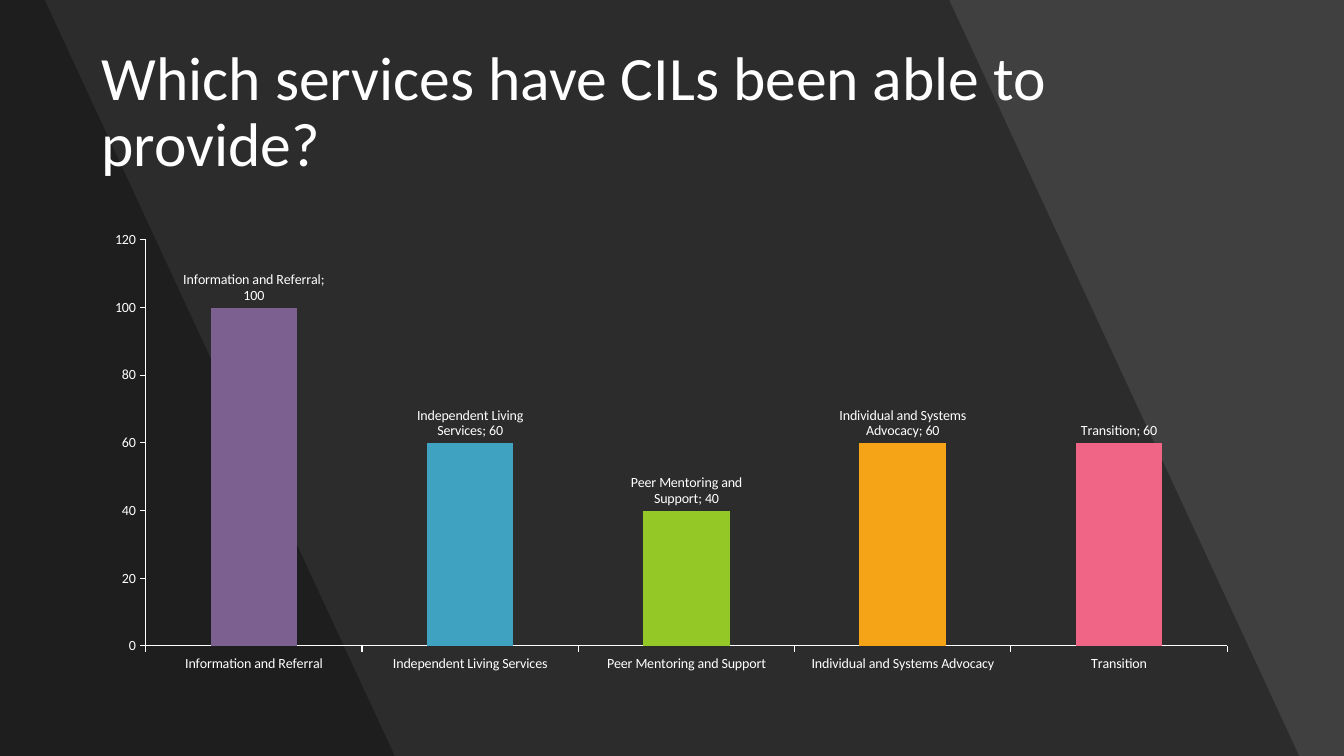
from dataclasses import dataclass

from lxml.etree import SubElement
from pptx import Presentation
from pptx.chart.data import CategoryChartData
from pptx.dml.color import RGBColor
from pptx.enum.chart import XL_CHART_TYPE, XL_LABEL_POSITION, XL_TICK_MARK
from pptx.enum.text import MSO_ANCHOR
from pptx.oxml import parse_xml
from pptx.oxml.ns import nsdecls, qn
from pptx.util import Pt


@dataclass(frozen=True)
class Theme:
    font: str = "Calibri"
    background: str = "404040"
    shade: str = "000000"
    shade_alpha: int = 30
    text: str = "FFFFFF"
    title_size: int = 44
    chart_size: int = 10


THEME = Theme()
WIDTH, HEIGHT = 960, 540
SERVICES = [
    ("Information and Referral", 100, "7C608F"),
    ("Independent Living Services", 60, "40A2C1"),
    ("Peer Mentoring and Support", 40, "94C826"),
    ("Individual and Systems Advocacy", 60, "F5A417"),
    ("Transition", 60, "F06485"),
]


def rgb(value):
    return RGBColor.from_string(value)


def set_solid(fill, color):
    fill.solid()
    fill.fore_color.rgb = rgb(color)


def set_font(font, size):
    formats = {"name": THEME.font, "size": Pt(size)}
    for name, value in formats.items():
        setattr(font, name, value)
    font.color.rgb = rgb(THEME.text)


def add_shade(slide, top_right, bottom_right):
    """Darken the slide left of a slanted edge."""
    builder = slide.shapes.build_freeform(0, 0, scale=Pt(1))
    corners = [(top_right, 0), (bottom_right, HEIGHT), (0, HEIGHT)]
    builder.add_line_segments(corners, close=True)
    sp = builder.convert_to_shape()
    sp.shadow.inherit = False
    sp.line.fill.background()
    set_solid(sp.fill, THEME.shade)
    color = sp.fill._xPr.find(qn("a:solidFill"))[0]
    SubElement(color, qn("a:alpha"), val=str(THEME.shade_alpha * 1000))


def add_title(slide, text):
    box = slide.shapes.add_textbox(Pt(65.5), Pt(29), Pt(829), Pt(104.5))
    tf = box.text_frame
    tf.word_wrap = True
    tf.vertical_anchor = MSO_ANCHOR.MIDDLE
    p = tf.paragraphs[0]
    p.line_spacing = 0.9
    r = p.add_run()
    r.text = text
    set_font(r.font, THEME.title_size)


def format_axis(axis):
    formats = {
        "has_major_gridlines": False,
        "major_tick_mark": XL_TICK_MARK.OUTSIDE,
        "minor_tick_mark": XL_TICK_MARK.NONE,
    }
    for name, value in formats.items():
        setattr(axis, name, value)
    line = axis.format.line
    line.width = Pt(0.75)
    line.color.rgb = rgb(THEME.text)
    set_font(axis.tick_labels.font, THEME.chart_size)


def format_labels(labels):
    formats = {
        "show_value": True,
        "show_category_name": True,
        "position": XL_LABEL_POSITION.OUTSIDE_END,
    }
    for name, value in formats.items():
        setattr(labels, name, value)
    set_font(labels.font, THEME.chart_size)
    separator = parse_xml(f"<c:separator {nsdecls('c')}>; </c:separator>")
    labels._element.find(qn("c:showBubbleSize")).addnext(separator)


def place_plot(chart, **fractions):
    """Fix the inner plot area as fractions of the chart frame."""
    area = chart._chartSpace.find(".//" + qn("c:plotArea"))
    for old in area.findall(qn("c:layout")):
        area.remove(old)
    values = {"layoutTarget": "inner", "xMode": "edge", "yMode": "edge", **fractions}
    layout = parse_xml(f"<c:layout {nsdecls('c')}><c:manualLayout/></c:layout>")
    for name, value in values.items():
        SubElement(layout[0], qn(f"c:{name}"), val=str(value))
    area.insert(0, layout)


def add_service_chart(slide):
    names, values, colors = zip(*SERVICES)
    data = CategoryChartData()
    data.categories = names
    data.add_series("Series 1", values)
    frame = slide.shapes.add_chart(
        XL_CHART_TYPE.COLUMN_CLUSTERED, Pt(66), Pt(159), Pt(828), Pt(327), data
    )
    chart = frame.chart
    chart.has_legend = False
    chart.has_title = False
    set_font(chart.font, THEME.chart_size)
    for axis in (chart.category_axis, chart.value_axis):
        format_axis(axis)
    scale = {"minimum_scale": 0, "maximum_scale": 120, "major_unit": 20}
    for name, value in scale.items():
        setattr(chart.value_axis, name, value)
    plot = chart.plots[0]
    plot.gap_width = 150
    plot.vary_by_categories = False
    series = plot.series[0]
    for i, color in enumerate(colors):
        set_solid(series.points[i].format.fill, color)
    format_labels(series.data_labels)
    place_plot(chart, x=0.046, y=0.038, w=0.933, h=0.887)


def main():
    prs = Presentation()
    prs.slide_width, prs.slide_height = Pt(WIDTH), Pt(HEIGHT)
    slide = prs.slides.add_slide(prs.slide_layouts[6])
    set_solid(slide.background.fill, THEME.background)
    add_shade(slide, 678, 928)
    add_shade(slide, 32, 282)
    add_title(slide, "Which services have CILs been able to provide?")
    add_service_chart(slide)
    prs.save("out.pptx")


if __name__ == "__main__":
    main()
